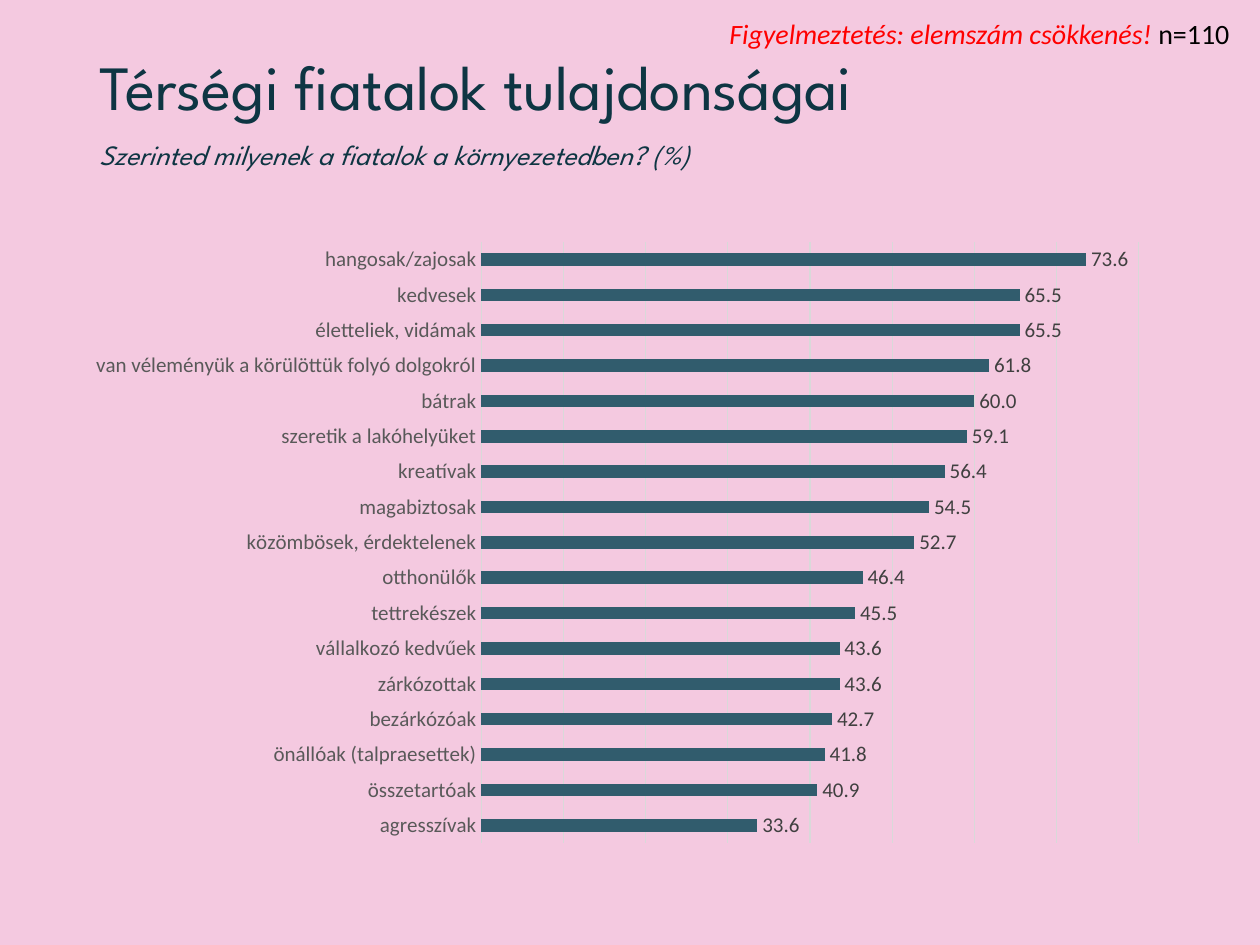
from pptx import Presentation
from pptx.chart.data import CategoryChartData
from pptx.dml.color import RGBColor
from pptx.enum.chart import XL_CHART_TYPE, XL_LABEL_POSITION, XL_TICK_MARK
from pptx.util import Inches, Pt

BAR = XL_CHART_TYPE.BAR_CLUSTERED
OUT_END = XL_LABEL_POSITION.OUTSIDE_END
NO_TICK = XL_TICK_MARK.NONE

WIDE, HIGH = 10, 7.5
LEFT = 0.69
HEAD, BODY = "League Spartan", "Calibri"
NAVY, TEAL, GRID = "0E3543", "315C6D", "D9D9D9"
FORMAT = "###0.0"

TRAITS = [
    ("hangosak/zajosak", 73.6),
    ("kedvesek", 65.5),
    ("életteliek, vidámak", 65.5),
    ("van véleményük a körülöttük folyó dolgokról", 61.8),
    ("bátrak", 60.0),
    ("szeretik a lakóhelyüket", 59.1),
    ("kreatívak", 56.4),
    ("magabiztosak", 54.5),
    ("közömbösek, érdektelenek", 52.7),
    ("otthonülők", 46.4),
    ("tettrekészek", 45.5),
    ("vállalkozó kedvűek", 43.6),
    ("zárkózottak", 43.6),
    ("bezárkózóak", 42.7),
    ("önállóak (talpraesettek)", 41.8),
    ("összetartóak", 40.9),
    ("agresszívak", 33.6),
]


def color(code):
    return RGBColor.from_string(code)


def style(font, size, code, name=BODY, italic=False):
    font.size, font.name, font.italic = Pt(size), name, italic
    font.color.rgb = color(code)


def rule(line):
    line.color.rgb = color(GRID)
    line.width = Pt(0.75)


def add_text(slide, place, runs, size, name, lead=1.0):
    """Add one paragraph; each run is (text, colour, italic)."""
    frame = slide.shapes.add_textbox(*map(Inches, place)).text_frame
    frame.word_wrap = True
    para = frame.paragraphs[0]
    para.line_spacing = lead
    for text, code, italic in runs:
        run = para.add_run()
        run.text = text
        style(run.font, size, code, name, italic)


def add_bars(slide, place, rows):
    """Chart the rows, the first of them on top."""
    data = CategoryChartData(number_format=FORMAT)
    names, vals = zip(*reversed(rows))
    data.categories = names
    data.add_series("Series 1", vals)
    chart = slide.shapes.add_chart(BAR, *map(Inches, place), data).chart
    chart.has_legend = chart.has_title = False
    style(chart.font, 10, "000000")

    cats = chart.category_axis
    cats.major_tick_mark = cats.minor_tick_mark = NO_TICK
    style(cats.tick_labels.font, 12, "595959")
    rule(cats.format.line)

    scale = chart.value_axis
    scale.minimum_scale, scale.maximum_scale, scale.major_unit = 0, 80, 10
    scale.visible = False
    scale.has_major_gridlines = True
    rule(scale.major_gridlines.format.line)

    plot = chart.plots[0]
    plot.gap_width = 182
    plot.vary_by_categories = False
    fill = plot.series[0].format.fill
    fill.solid()
    fill.fore_color.rgb = color(TEAL)

    plot.has_data_labels = True
    labels = plot.data_labels
    labels.show_value = True
    labels.position = OUT_END
    labels.number_format, labels.number_format_is_linked = FORMAT, False
    style(labels.font, 12, "404040")


def main():
    deck = Presentation()
    deck.slide_width, deck.slide_height = Inches(WIDE), Inches(HIGH)
    slide = deck.slides.add_slide(deck.slide_layouts[6])
    back = slide.background.fill
    back.solid()
    back.fore_color.rgb = color("F4C9E0")

    add_text(slide, (LEFT, 0.4, WIDE - 2 * LEFT, 0.8),
             [("Térségi fiatalok tulajdonságai", NAVY, False)], 36, HEAD, 0.9)
    add_bars(slide, (0.59, 1.82, 8.62, 4.97), TRAITS)
    add_text(slide, (5.69, 0.08, WIDE - 5.69, 0.37),
             [("Figyelmeztetés: elemszám csökkenés! ", "FF0000", True),
              ("n=110", "000000", False)], 16, BODY)
    add_text(slide, (LEFT, 1.07, 8.43, 0.54),
             [("Szerinted milyenek a fiatalok a környezetedben? (%)", NAVY, True)],
             16, HEAD, 0.9)
    deck.save("out.pptx")


if __name__ == "__main__":
    main()
